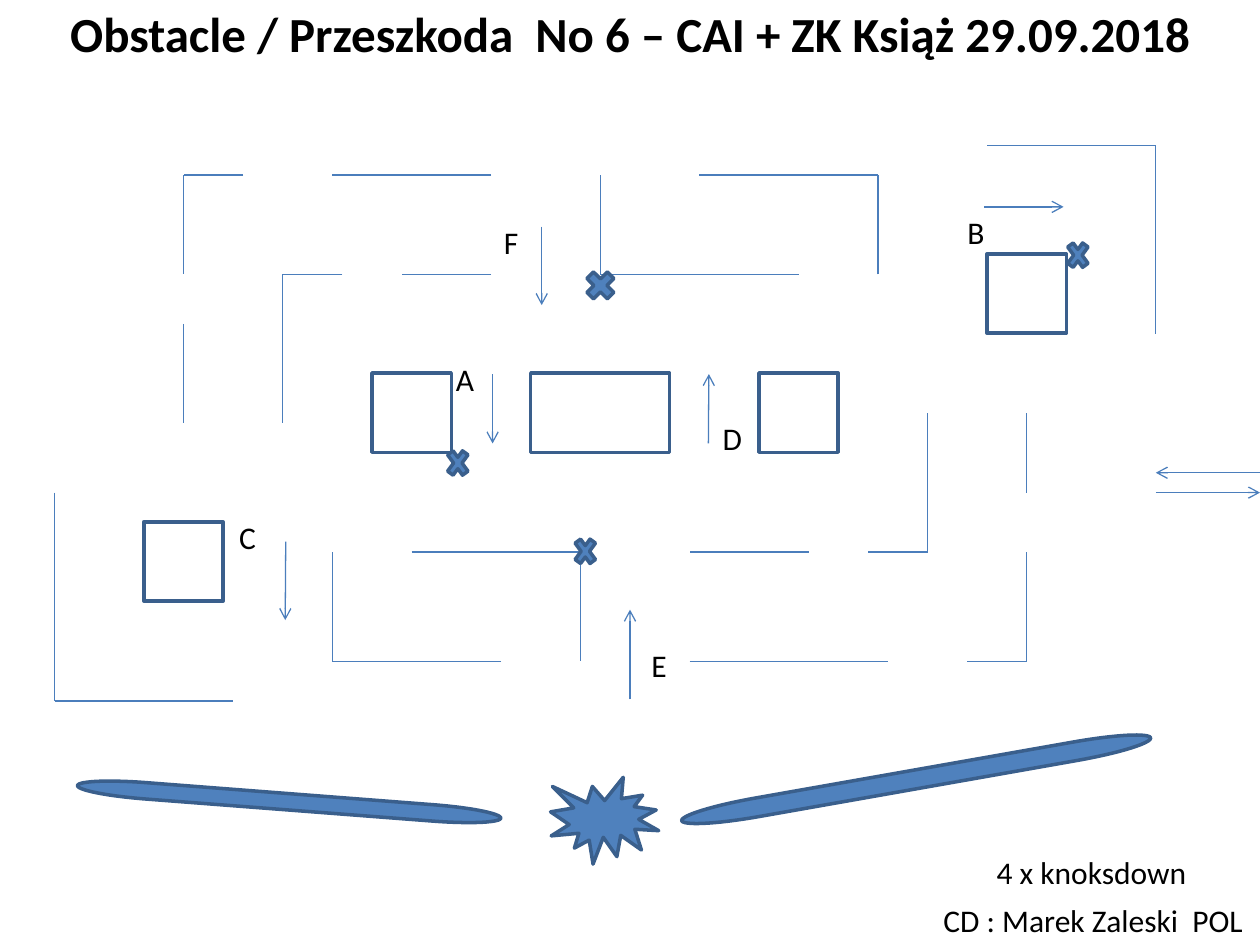
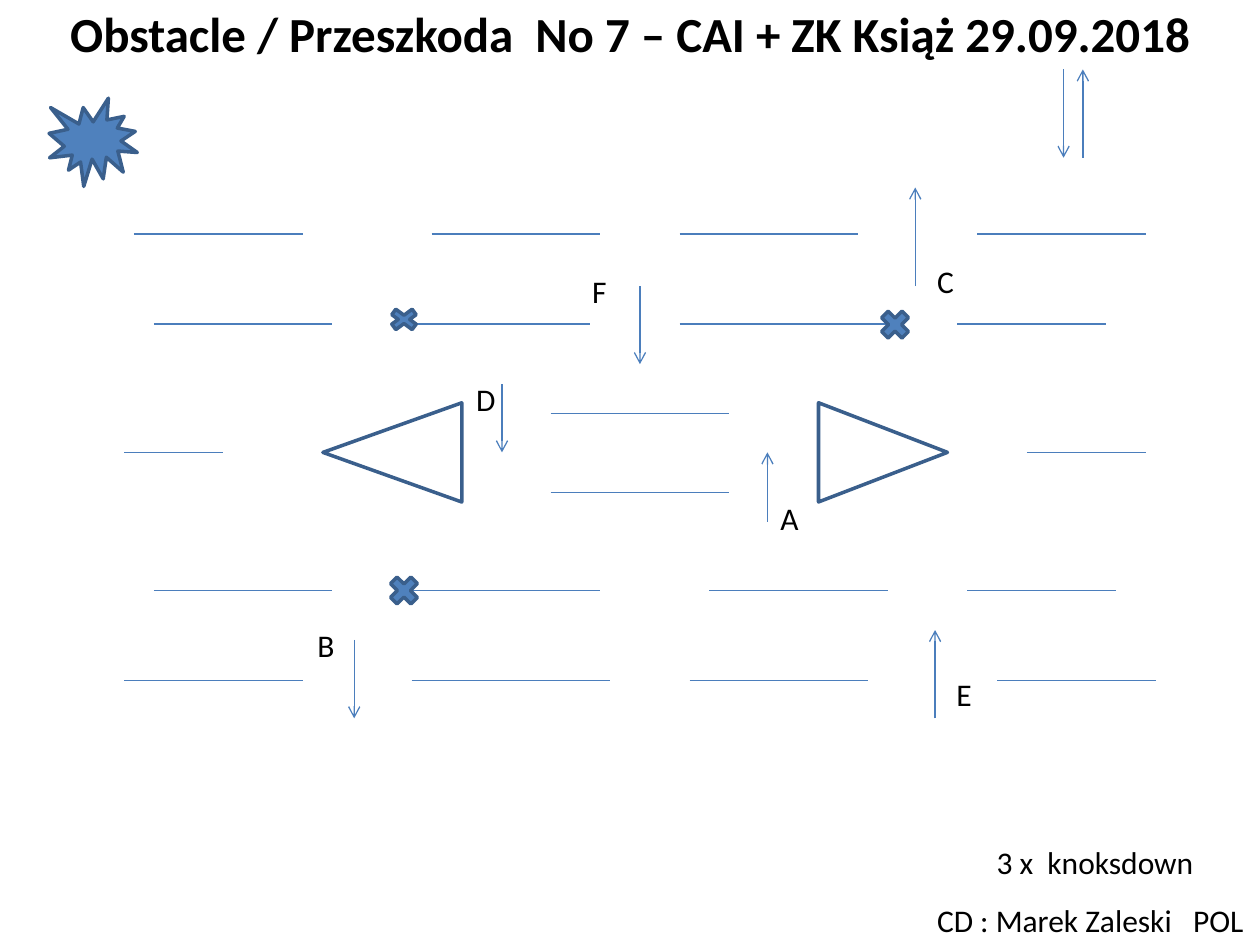
from dataclasses import dataclass
from itertools import pairwise
from typing import NamedTuple

from lxml.etree import SubElement
from pptx import Presentation
from pptx.dml.color import RGBColor
from pptx.enum.shapes import MSO_CONNECTOR, MSO_SHAPE as Preset
from pptx.enum.text import MSO_ANCHOR, MSO_AUTO_SIZE, PP_ALIGN
from pptx.oxml.ns import qn
from pptx.util import Cm, Pt


@dataclass(frozen=True)
class Theme:
    font: str = "Calibri"
    ink: RGBColor = RGBColor(0x00, 0x00, 0x00)
    fill: RGBColor = RGBColor(0x4F, 0x81, 0xBD)
    outline: RGBColor = RGBColor(0x3A, 0x5F, 0x8C)
    rail: RGBColor = RGBColor(0x4B, 0x7E, 0xBC)
    title_size: Pt = Pt(28)
    text_size: Pt = Pt(18)
    outline_width: Pt = Pt(2)
    rail_width: Pt = Pt(0.75)


THEME = Theme()
SLIDE_WIDTH, SLIDE_HEIGHT = 25.4, 19.05
TITLE_HEIGHT = 1.32
LABEL_WIDTH, LABEL_HEIGHT = 0.86, 1.02


# All lengths below are centimetres
class Point(NamedTuple):
    x: float
    y: float


class Arrow(NamedTuple):
    start: Point
    end: Point


class Gate(NamedTuple):
    letter: str
    label: Point
    arrow: Arrow


class Block(NamedTuple):
    preset: Preset
    left: float
    top: float
    width: float
    height: float
    filled: bool = True
    rotation: float = 0


class Caption(NamedTuple):
    text: str
    left: float
    top: float
    width: float


@dataclass(frozen=True)
class Obstacle:
    number: int
    walls: list[list[Point]]
    blocks: list[Block]
    passages: list[Arrow]
    gates: list[Gate]
    crosses: list[Block]
    captions: list[Caption]


def wall(*corners: tuple[float, float]) -> list[Point]:
    return [Point(*corner) for corner in corners]


def arrow(x1: float, y1: float, x2: float, y2: float) -> Arrow:
    return Arrow(Point(x1, y1), Point(x2, y2))


def gate(letter: str, x: float, y: float, *ends: float) -> Gate:
    return Gate(letter, Point(x, y), arrow(*ends))


def pen(left: float, top: float, width: float = 1.6) -> Block:
    return Block(Preset.RECTANGLE, left, top, width, 1.6, filled=False)


def cross(left: float, top: float, width: float = 0.79, height: float = 0.79) -> Block:
    return Block(Preset.MATH_MULTIPLY, left, top, width, height)


def draw_run(paragraph, text: str, size: Pt, bold: bool = False) -> None:
    run = paragraph.add_run()
    run.text = text
    run.font.name, run.font.size, run.font.bold = THEME.font, size, bold
    run.font.color.rgb = THEME.ink


def draw_title(slide, text: str) -> None:
    title = slide.shapes.title
    title.left, title.top = Cm(0), Cm(0)
    title.width, title.height = Cm(SLIDE_WIDTH), Cm(TITLE_HEIGHT)
    title.text_frame.vertical_anchor = MSO_ANCHOR.MIDDLE
    heading = title.text_frame.paragraphs[0]
    heading.alignment = PP_ALIGN.CENTER
    draw_run(heading, text, THEME.title_size, bold=True)


def draw_caption(slide, caption: Caption) -> None:
    box = slide.shapes.add_textbox(
        Cm(caption.left), Cm(caption.top), Cm(caption.width), Cm(LABEL_HEIGHT))
    box.text_frame.word_wrap = False
    box.text_frame.auto_size = MSO_AUTO_SIZE.SHAPE_TO_FIT_TEXT
    draw_run(box.text_frame.paragraphs[0], caption.text, THEME.text_size)


def draw_line(slide, start: Point, end: Point, headed: bool = False) -> None:
    rail = slide.shapes.add_connector(
        MSO_CONNECTOR.STRAIGHT, Cm(start.x), Cm(start.y), Cm(end.x), Cm(end.y))
    rail.line.color.rgb = THEME.rail
    rail.line.width = THEME.rail_width
    if headed:
        SubElement(rail.line._get_or_add_ln(), qn("a:tailEnd"), type="arrow")
    SubElement(rail._element.spPr, qn("a:effectLst"))


def draw_block(slide, block: Block) -> None:
    shape = slide.shapes.add_shape(
        block.preset, Cm(block.left), Cm(block.top), Cm(block.width), Cm(block.height))
    shape.rotation = block.rotation
    shape.shadow.inherit = False
    if block.filled:
        shape.fill.solid()
        shape.fill.fore_color.rgb = THEME.fill
    else:
        shape.fill.background()
    shape.line.color.rgb = THEME.outline
    shape.line.width = THEME.outline_width


def draw_obstacle(deck, obstacle: Obstacle) -> None:
    slide = deck.slides.add_slide(deck.slide_layouts.get_by_name("Title Only"))
    draw_title(slide, f"Obstacle / Przeszkoda  No {obstacle.number} – CAI + ZK Książ 29.09.2018")
    for corners in obstacle.walls:
        for start, end in pairwise(corners):
            draw_line(slide, start, end)
    for block in obstacle.blocks:
        draw_block(slide, block)
    for passage in obstacle.passages:
        draw_line(slide, *passage, headed=True)
    for letter, label, direction in obstacle.gates:
        draw_line(slide, *direction, headed=True)
        draw_caption(slide, Caption(letter, label.x, label.y, LABEL_WIDTH))
    for mark in obstacle.crosses:
        draw_block(slide, mark)
    for caption in obstacle.captions:
        draw_caption(slide, caption)


# Obstacle 6: a walled maze with square pens
MAZE = Obstacle(
    number=6,
    walls=[
        # Upper left
        wall((4.9, 3.53), (3.7, 3.53), (3.7, 5.53)),
        wall((3.7, 6.53), (3.7, 8.53)),
        wall((9.9, 3.53), (6.7, 3.53)),
        wall((6.9, 5.53), (5.7, 5.53), (5.7, 8.53)),
        wall((9.9, 5.53), (8.1, 5.53)),
        # Upper right
        wall((12.1, 3.53), (12.1, 5.53), (16.1, 5.53)),
        wall((17.7, 5.53), (17.7, 3.53), (14.1, 3.53)),
        wall((23.3, 6.73), (23.3, 2.93), (19.9, 2.93)),
        # Lower right
        wall((18.7, 8.33), (18.7, 11.13), (17.5, 11.13)),
        wall((20.7, 8.33), (20.7, 9.93)),
        wall((20.7, 11.13), (20.7, 13.33), (19.5, 13.33)),
        wall((16.3, 11.13), (13.9, 11.13)),
        wall((13.9, 13.33), (17.9, 13.33)),
        # Lower left
        wall((8.3, 11.13), (11.7, 11.13), (11.7, 13.33)),
        wall((10.1, 13.33), (6.7, 13.33), (6.7, 11.13)),
        wall((1.1, 9.93), (1.1, 14.13), (4.7, 14.13)),
    ],
    blocks=[
        pen(10.7, 7.52, width=2.8),
        pen(15.3, 7.52),
        pen(7.5, 7.52),
        pen(19.9, 5.12),
        pen(2.9, 10.52),
        Block(Preset.EXPLOSION1, 11.1, 15.67, 2.18, 1.75),
        Block(Preset.FLOWCHART_TERMINATOR, 13.67, 15.52, 9.6, 0.38, rotation=350),
        Block(Preset.FLOWCHART_TERMINATOR, 1.55, 16, 8.56, 0.33, rotation=4.4),
    ],
    passages=[arrow(25.4, 9.53, 23.3, 9.53), arrow(23.3, 9.93, 25.4, 9.93)],
    gates=[
        gate("A", 8.94, 7.14, 9.93, 7.54, 9.93, 8.94),
        gate("B", 19.25, 4.17, 19.84, 4.17, 21.44, 4.17),
        gate("C", 4.57, 10.31, 5.76, 10.92, 5.75, 12.5),
        gate("D", 14.32, 8.33, 14.28, 8.94, 14.29, 7.54),
        gate("E", 12.88, 12.9, 12.7, 14.1, 12.7, 12.29),
        gate("F", 9.91, 4.37, 10.92, 4.57, 10.92, 6.15),
    ],
    crosses=[
        cross(21.44, 4.75, width=0.58),
        cross(8.94, 8.94, width=0.58),
        cross(11.51, 10.72, width=0.58),
        cross(11.71, 5.36),
    ],
    captions=[
        Caption("4 x knoksdown", 19.84, 17.07, 4.37),
        Caption("CD : Marek Zaleski  POL", 18.77, 18.03, 6.63),
    ],
)

# Obstacle 7: rows of rails, each a height with its (from, to) spans
RAIL_ROWS = {
    4.72: [(2.7, 6.1), (8.7, 12.1), (13.7, 17.3), (19.7, 23.1)],
    6.53: [(3.1, 6.7), (8.1, 11.9), (13.7, 17.9), (19.3, 22.3)],
    8.33: [(11.1, 14.7)],
    9.12: [(2.5, 4.5), (20.7, 23.1)],
    9.93: [(11.1, 14.7)],
    11.91: [(3.1, 6.7), (8.1, 12.1), (14.3, 17.9), (19.5, 22.5)],
    13.72: [(2.5, 6.1), (8.3, 12.3), (13.9, 17.5), (20.1, 23.3)],
}
RAILS = Obstacle(
    number=7,
    walls=[wall((x1, y), (x2, y)) for y, spans in RAIL_ROWS.items() for x1, x2 in spans],
    blocks=[
        Block(Preset.ISOSCELES_TRIANGLE, 6.91, 7.72, 2, 2.8, filled=False, rotation=270),
        Block(Preset.ISOSCELES_TRIANGLE, 16.8, 7.82, 2, 2.6, filled=False, rotation=90),
        Block(Preset.EXPLOSION1, 0.99, 1.98, 1.78, 1.78),
    ],
    passages=[arrow(21.83, 3.18, 21.83, 1.4), arrow(21.44, 1.4, 21.44, 3.18)],
    gates=[
        gate("A", 15.48, 9.93, 15.47, 10.52, 15.47, 9.12),
        gate("B", 6.15, 12.5, 7.14, 12.9, 7.14, 14.48),
        gate("C", 18.64, 5.16, 18.45, 5.77, 18.45, 3.78),
        gate("D", 9.35, 7.54, 10.12, 7.75, 10.12, 9.12),
        gate("E", 19.03, 13.49, 18.85, 14.48, 18.85, 12.7),
        gate("F", 11.69, 5.36, 12.9, 5.77, 12.9, 7.34),
    ],
    crosses=[
        cross(7.75, 11.51),
        cross(7.75, 6.15, height=0.58),
        cross(17.65, 6.15),
    ],
    captions=[
        Caption("3 x  knoksdown", 19.84, 16.87, 4.52),
        Caption("CD : Marek Zaleski   POL", 18.64, 18.03, 6.76),
    ],
)


def main() -> None:
    deck = Presentation()
    deck.slide_width, deck.slide_height = Cm(SLIDE_WIDTH), Cm(SLIDE_HEIGHT)
    for obstacle in (MAZE, RAILS):
        draw_obstacle(deck, obstacle)
    deck.save("out.pptx")


if __name__ == "__main__":
    main()
